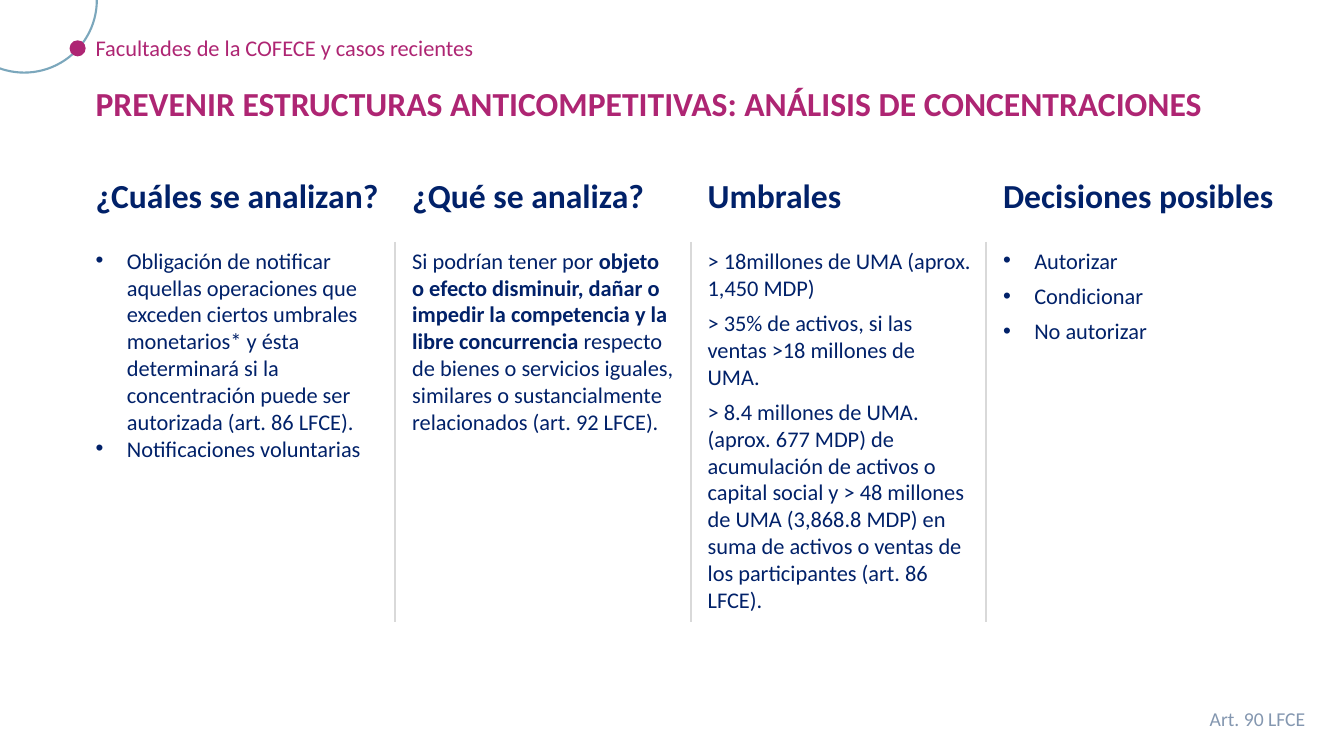
from dataclasses import dataclass

from lxml.etree import SubElement
from pptx import Presentation
from pptx.dml.color import RGBColor
from pptx.enum.shapes import MSO_CONNECTOR, MSO_SHAPE
from pptx.enum.text import MSO_AUTO_SIZE as AutoSize
from pptx.oxml.ns import qn
from pptx.util import Emu, Pt

EMU_PER_PX = 9144  # 100 px to the inch
FONT = "Calibri"
NAVY, MAGENTA, TEAL = "012169", "AE2573", "7BA7BC"
LIGHT_GRAY, SLATE = "D9D9D9", "8497B0"

HEADING_TOP, BODY_TOP, BODY_BOTTOM = 169, 240, 617
MARGIN_LEFT, SECOND_LEFT, COLUMN_STEP = 85, 399, 293
DIVIDER_GAP = 7
BULLET_INDENT = 31


@dataclass
class Run:
    text: str
    bold: bool = False


@dataclass
class TextStyle:
    size: int
    color: str
    bold: bool = False
    bulleted: bool = False
    space_after: int = 0
    wrap: bool = True


@dataclass
class Column:
    heading: str
    heading_width: int
    body_width: int
    body_height: int
    paragraphs: list[list[Run]]
    bulleted: bool = False
    space_after: int = 0


COLUMNS = [
    Column("¿Cuáles se analizan?", 301, 301, 226, [
        [Run("Obligación de notificar aquellas operaciones que exceden ciertos "
             "umbrales monetarios* y ésta determinará si la concentración puede "
             "ser autorizada (art. 86 LFCE).")],
        [Run("Notificaciones voluntarias")],
    ], bulleted=True),
    Column("¿Qué se analiza?", 281, 281, 199, [
        [Run("Si podrían tener por "),
         Run("objeto o efecto disminuir, dañar o impedir la competencia y la "
             "libre concurrencia ", bold=True),
         Run("respecto de bienes o servicios iguales, similares o "
             "sustancialmente relacionados (art. 92 LFCE).")],
    ]),
    Column("Umbrales", 281, 281, 377, [
        [Run("> 18millones de UMA (aprox. 1,450 MDP)")],
        [Run("> 35% de activos, si las ventas >18 millones de UMA.")],
        [Run("> 8.4 millones de UMA. (aprox. 677 MDP) de acumulación de activos "
             "o capital social y > 48 millones de UMA (3,868.8 MDP) en suma de "
             "activos o ventas de los participantes (art. 86 LFCE).")],
    ], space_after=6),
    Column("Decisiones posibles", 294, 281, 108, [
        [Run("Autorizar")],
        [Run("Condicionar")],
        [Run("No autorizar")],
    ], bulleted=True, space_after=6),
]


def px(length: int) -> Emu:
    return Emu(length * EMU_PER_PX)


def rgb(color: str) -> RGBColor:
    return RGBColor.from_string(color)


def add_bullet(paragraph) -> None:
    properties = paragraph._p.get_or_add_pPr()
    properties.set("marL", str(px(BULLET_INDENT)))
    properties.set("indent", str(px(-BULLET_INDENT)))
    SubElement(properties, qn("a:buFont")).set("typeface", "Arial")
    SubElement(properties, qn("a:buChar")).set("char", "•")


def add_text(slide, left: int, top: int, width: int, height: int,
             paragraphs: list[list[Run]], style: TextStyle) -> None:
    shape = slide.shapes.add_textbox(px(left), px(top), px(width), px(height))
    frame = shape.text_frame
    frame.word_wrap = style.wrap
    frame.auto_size = AutoSize.SHAPE_TO_FIT_TEXT
    for index, runs in enumerate(paragraphs):
        paragraph = frame.add_paragraph() if index else frame.paragraphs[0]
        paragraph.space_after = Pt(style.space_after)
        if style.bulleted:
            add_bullet(paragraph)
        font = paragraph.font
        font.name, font.size, font.bold = FONT, Pt(style.size), style.bold
        font.color.rgb = rgb(style.color)
        for part in runs:
            run = paragraph.add_run()
            run.text = part.text
            if part.bold:
                run.font.bold = True


def add_divider(slide, x: int) -> None:
    line = slide.shapes.add_connector(
        MSO_CONNECTOR.STRAIGHT, px(x), px(BODY_TOP), px(x), px(BODY_BOTTOM))
    line.line.color.rgb = rgb(LIGHT_GRAY)
    line.line.width = Pt(1.5)
    SubElement(line._element.spPr, qn("a:effectLst"))


def add_corner_ornament(slide) -> None:
    arc = slide.shapes.add_shape(MSO_SHAPE.ARC, px(-48), px(-72), px(144), px(144))
    arc.adjustments[0], arc.adjustments[1] = 80.19, 146.89
    arc.rotation = 225
    arc.shadow.inherit = False
    arc.fill.background()
    arc.line.color.rgb = rgb(TEAL)
    arc.line.width = Pt(1.5)

    dot = slide.shapes.add_shape(MSO_SHAPE.OVAL, px(69), px(40), px(16), px(16))
    dot.shadow.inherit = False
    dot.fill.solid()
    dot.fill.fore_color.rgb = rgb(MAGENTA)
    dot.line.fill.background()


def add_column(slide, index: int, column: Column) -> None:
    left = SECOND_LEFT + (index - 1) * COLUMN_STEP if index else MARGIN_LEFT
    if index:
        add_divider(slide, left - DIVIDER_GAP)
    add_text(slide, left, HEADING_TOP, column.heading_width, 50,
             [[Run(column.heading)]], TextStyle(24, NAVY, bold=True))
    add_text(slide, left, BODY_TOP, column.body_width, column.body_height,
             column.paragraphs,
             TextStyle(16, NAVY, bulleted=column.bulleted,
                       space_after=column.space_after))


def main() -> None:
    presentation = Presentation()
    presentation.slide_width, presentation.slide_height = px(1333), px(750)
    slide = presentation.slides.add_slide(presentation.slide_layouts[6])

    # Section label and title
    add_corner_ornament(slide)
    add_text(slide, MARGIN_LEFT, 29, 667, 37,
             [[Run("Facultades de la COFECE y casos recientes")]],
             TextStyle(16, MAGENTA))
    add_text(slide, MARGIN_LEFT, 77, 1156, 50,
             [[Run("PREVENIR ESTRUCTURAS ANTICOMPETITIVAS: "
                   "ANÁLISIS DE CONCENTRACIONES")]],
             TextStyle(24, MAGENTA, bold=True))

    # Four columns
    for index, column in enumerate(COLUMNS):
        add_column(slide, index, column)

    # Legal reference
    add_text(slide, 1190, 696, 116, 34, [[Run("Art. 90 LFCE")]],
             TextStyle(14, SLATE, wrap=False))

    presentation.save("out.pptx")


if __name__ == "__main__":
    main()
